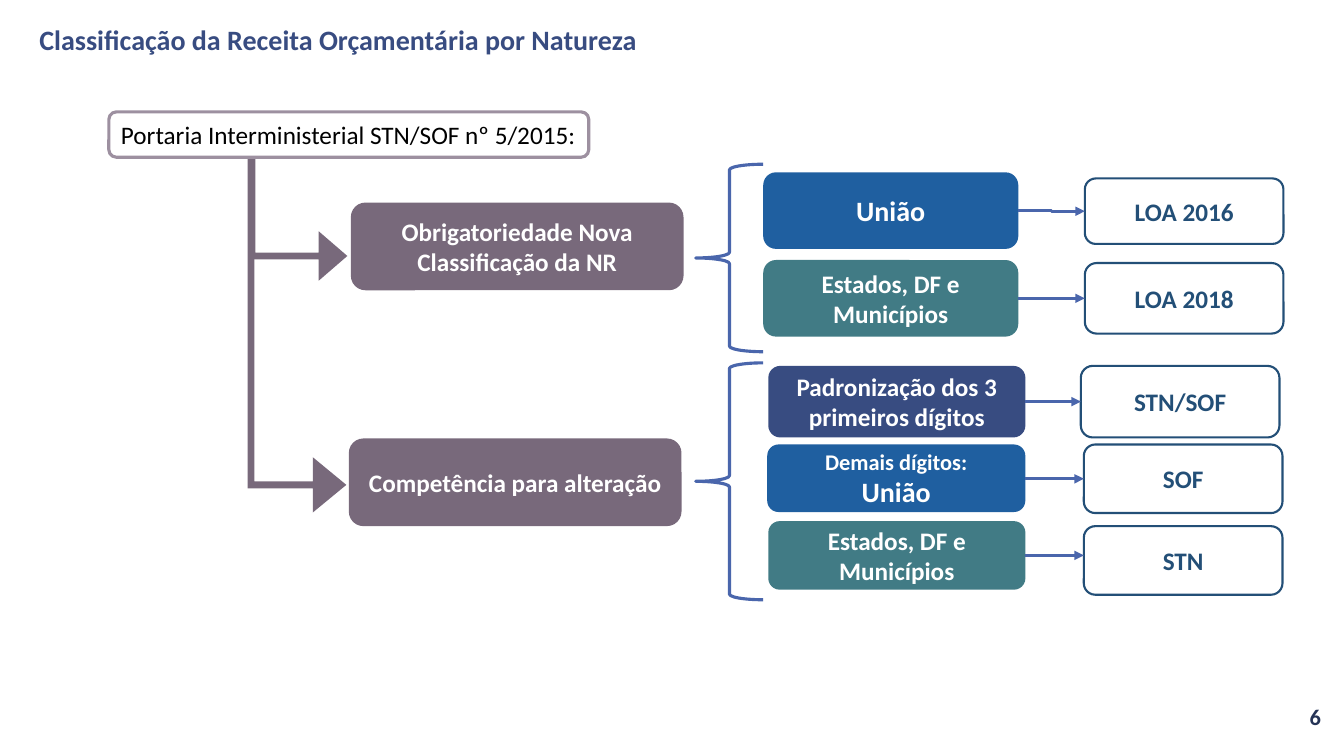
from lxml import etree
from pptx import Presentation
from pptx.dml.color import RGBColor
from pptx.enum.shapes import MSO_CONNECTOR, MSO_SHAPE
from pptx.enum.text import MSO_ANCHOR, MSO_AUTO_SIZE, PP_ALIGN
from pptx.oxml.ns import qn
from pptx.util import Pt

PX = 9144
ROUND = MSO_SHAPE.ROUNDED_RECTANGLE
BRACE = MSO_SHAPE.LEFT_BRACE
ARROW = MSO_SHAPE.BENT_UP_ARROW
ELBOW = MSO_CONNECTOR.ELBOW
LEFT, CENTER, RIGHT = PP_ALIGN.LEFT, PP_ALIGN.CENTER, PP_ALIGN.RIGHT
TOP, MIDDLE = MSO_ANCHOR.TOP, MSO_ANCHOR.MIDDLE
FIXED, GROW = MSO_AUTO_SIZE.NONE, MSO_AUTO_SIZE.SHAPE_TO_FIT_TEXT

WHITE = RGBColor(0xFF, 0xFF, 0xFF)
BLACK = RGBColor(0x00, 0x00, 0x00)
INDIGO = RGBColor(0x38, 0x4C, 0x81)
NAVY = RGBColor(0x25, 0x33, 0x56)
MAUVE = RGBColor(0x78, 0x69, 0x7B)
LILAC = RGBColor(0x9D, 0x90, 0xA0)
BLUE = RGBColor(0x1F, 0x5F, 0xA0)
TEAL = RGBColor(0x41, 0x7B, 0x85)
STEEL = RGBColor(0x23, 0x4F, 0x77)
LINK = RGBColor(0x4A, 0x66, 0xAC)

STATES = [("Estados, DF e Municípios", 18)]
ROWS = [
    ((757, 171, 253, 76), BLUE, [("União", 20)], (1076, 177, 197, 65), "LOA 2016"),
    ((757, 258, 253, 76), TEAL, STATES, (1076, 261, 197, 70), "LOA 2018"),
    ((762, 363, 255, 71), INDIGO, [("Padronização dos 3 primeiros dígitos", 18)],
     (1072, 363, 197, 71), "STN/SOF"),
    ((761, 441, 256, 67), BLUE, [("Demais dígitos:", 16), ("União", 20)],
     (1075, 441, 197, 68), "SOF"),
    ((762, 517, 255, 68), TEAL, STATES, (1075, 522, 197, 68), "STN"),
]
TOPICS = [
    ((348, 201, 330, 87), "Obrigatoriedade Nova Classificação da NR"),
    ((346, 435, 330, 87), "Competência para alteração"),
]
BRACES = [(690, 163, 67, 186), (690, 360, 67, 235)]
ARROWS = [
    ((234, 168, 123, 98), (0.07, 0.25, 0.29)),
    ((116, 281, 357, 98), (0.07, 0.28, 0.34)),
]


def scale(box):
    return [n * PX for n in box]


def write(shape, lines, color, bold=True, align=CENTER, anchor=MIDDLE,
          wrap=True, fit=FIXED):
    frame = shape.text_frame
    for name, value in {"word_wrap": wrap, "auto_size": fit,
                        "vertical_anchor": anchor}.items():
        setattr(frame, name, value)
    for i, (text, size) in enumerate(lines):
        para = frame.add_paragraph() if i else frame.paragraphs[0]
        para.alignment = align
        run = para.add_run()
        run.text = text
        for name, value in {"name": "Calibri", "size": Pt(size),
                            "bold": bold}.items():
            setattr(run.font, name, value)
        run.font.color.rgb = color
    return frame


def add_form(slide, kind, box, fill=None, line=None, width=2.25):
    shape = slide.shapes.add_shape(kind, *scale(box))
    shape.shadow.inherit = False
    if fill is None:
        shape.fill.background()
    else:
        shape.fill.solid()
        shape.fill.fore_color.rgb = fill
    if line is None:
        shape.line.fill.background()
    else:
        shape.line.color.rgb = line
        shape.line.width = Pt(width)
    return shape


def add_arrow(slide, box, ratios):
    arrow = add_form(slide, ARROW, box, MAUVE)
    arrow.rotation = 90
    for i, ratio in enumerate(ratios):
        arrow.adjustments[i] = ratio


def add_link(slide, start, end):
    level = start.top + start.height // 2
    link = slide.shapes.add_connector(
        ELBOW, start.left + start.width, level, end.left, level)
    link.begin_connect(start, 3)
    if abs(end.top + end.height // 2 - level) <= PX:
        link.end_connect(end, 1)
    link.line.color.rgb = LINK
    link.line.width = Pt(2.25)
    etree.SubElement(link.line._get_or_add_ln(), qn("a:tailEnd"), type="triangle")
    etree.SubElement(link._element.spPr, qn("a:effectLst"))


def add_row(slide, box, fill, lines, goal, label):
    start = add_form(slide, ROUND, box, fill)
    write(start, lines, WHITE)
    end = add_form(slide, ROUND, goal, line=STEEL, width=1.5)
    write(end, [(label, 18)], STEEL)
    add_link(slide, start, end)


def add_title(slide, text):
    title = slide.shapes.title
    title.left, title.top, title.width, title.height = scale((29, -31, 1150, 145))
    frame = write(title, [(text, 20)], INDIGO, align=LEFT)
    frame.paragraphs[0].line_spacing = 0.9


def add_page(slide, text):
    page = slide.shapes.add_textbox(*scale((1289, 691, 31, 40)))
    frame = write(page, [(text, 16)], NAVY, align=RIGHT)
    frame.margin_left = 0


def main():
    deck = Presentation()
    deck.slide_width, deck.slide_height = scale((1333, 750))
    slide = deck.slides.add_slide(deck.slide_layouts[5])
    add_title(slide, "Classificação da Receita Orçamentária por Natureza")
    add_page(slide, "6")
    for box, text in TOPICS:
        write(add_form(slide, ROUND, box, MAUVE), [(text, 18)], WHITE)
    for row in ROWS:
        add_row(slide, *row)
    for box in BRACES:
        add_form(slide, BRACE, box, line=LINK)
    for box, ratios in ARROWS:
        add_arrow(slide, box, ratios)
    head = add_form(slide, ROUND, (108, 111, 476, 45), WHITE, LILAC)
    write(head, [("Portaria Interministerial STN/SOF nº 5/2015:", 18)], BLACK,
          bold=False, align=LEFT, anchor=TOP, wrap=False, fit=GROW)
    deck.save("out.pptx")


if __name__ == "__main__":
    main()
